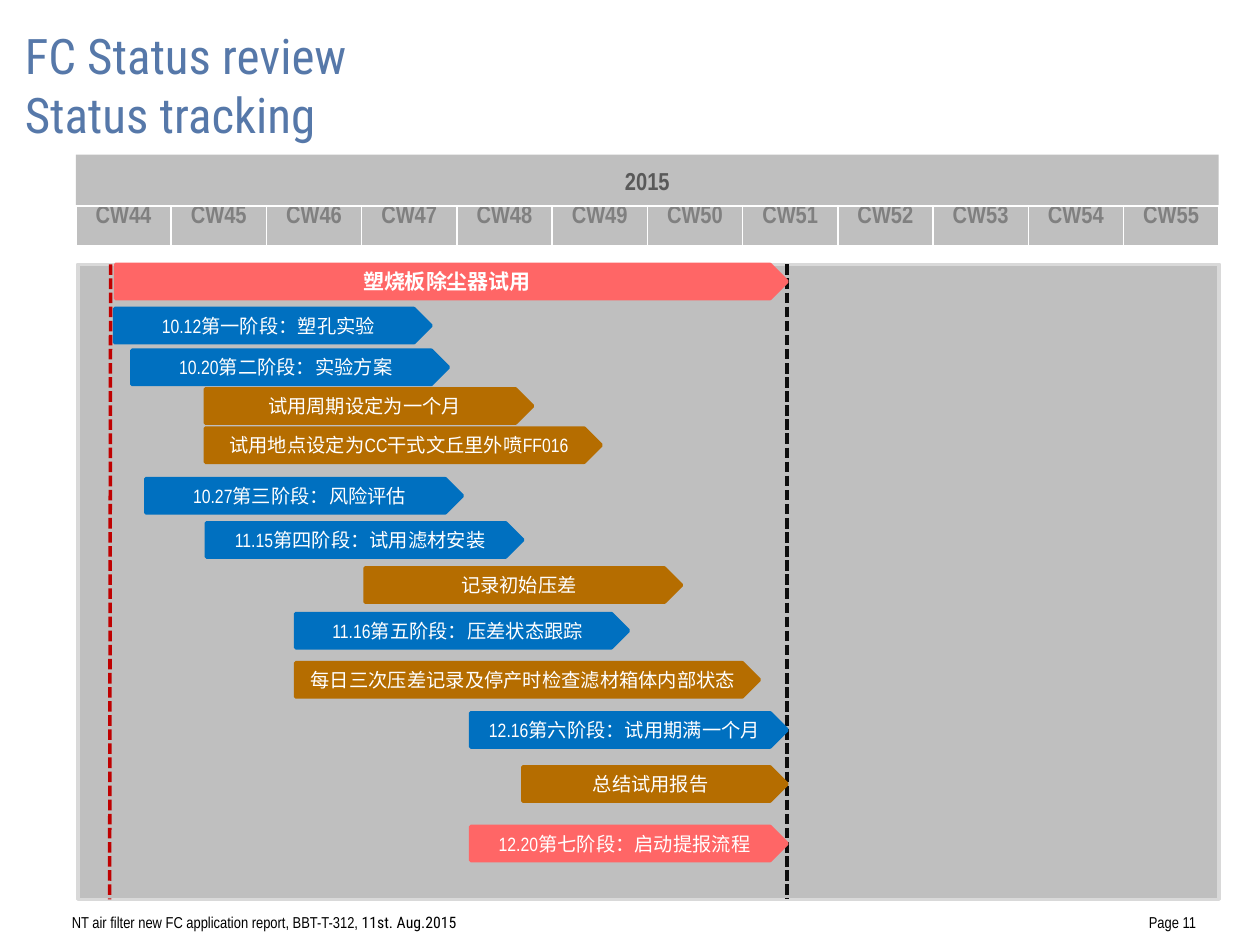
import pptx
import pptx.util
import pptx.dml.color
import pptx.enum.dml
import pptx.enum.shapes
import pptx.enum.text
import pptx.oxml
import pptx.oxml.ns
from pptx.util import Cm

COLOURS = {
    "panel": "BFBFBF",
    "panel_edge": "D9D9D9",
    "title": "5678A9",
    "year": "595959",
    "week": "808080",
    "white": "FFFFFF",
    "black": "000000",
    "finish": "0D0D0D",
    "start": "BF0000",
    "milestone": "FF6666",
    "phase": "0070C0",
    "task": "B56D00",
}
NARROW = "Arial Narrow"
CONDENSED = "Roboto Condensed"
ALIGN = pptx.enum.text.PP_ALIGN
ANCHOR = pptx.enum.text.MSO_ANCHOR
SHAPE = pptx.enum.shapes.MSO_SHAPE
BAR_HEIGHT = 0.69
BARS = [
    (0.76, 0, 13.54, "milestone", "塑烧板除尘器试用"),
    (0.74, 0.89, 6.38, "phase", "10.12第一阶段：塑孔实验"),
    (1.09, 1.73, 6.38, "phase", "10.20第二阶段：实验方案"),
    (2.57, 2.51, 6.6, "task", "试用周期设定为一个月"),
    (2.57, 3.3, 7.98, "task", "试用地点设定为CC干式文丘里外喷FF016"),
    (1.37, 4.32, 6.38, "phase", "10.27第三阶段：风险评估"),
    (2.59, 5.21, 6.38, "phase", "11.15第四阶段：试用滤材安装"),
    (5.79, 6.12, 6.38, "task", "记录初始压差"),
    (4.39, 7.04, 6.71, "phase", "11.16第五阶段：压差状态跟踪"),
    (4.39, 8.03, 9.35, "task", "每日三次压差记录及停产时检查滤材箱体内部状态"),
    (7.92, 9.04, 6.38, "phase", "12.16第六阶段：试用期满一个月"),
    (8.97, 10.13, 5.33, "task", "总结试用报告"),
    (7.92, 11.33, 6.38, "milestone", "12.20第七阶段：启动提报流程"),
]


def colour(name):
    return pptx.dml.color.RGBColor.from_string(COLOURS[name])


def add_span(para, text, *, size, tint, font=NARROW, bold=False):
    span = para.add_run()
    span.text = text
    span.font.size = pptx.util.Pt(size)
    span.font.name = font
    span.font.bold = bold
    span.font.color.rgb = colour(tint)


def set_frame(frame, *, anchor=ANCHOR.MIDDLE, side=0, edge=0):
    frame.word_wrap = True
    frame.vertical_anchor = anchor
    frame.margin_left = frame.margin_right = Cm(side)
    frame.margin_top = frame.margin_bottom = Cm(edge)


def add_block(page, kind, box, fill, edge=None):
    block = page.shapes.add_shape(kind, *map(Cm, box))
    block.shadow.inherit = False
    block.fill.solid()
    block.fill.fore_color.rgb = colour(fill)
    if edge:
        block.line.color.rgb = colour(edge)
        block.line.width = pptx.util.Pt(2)
    else:
        block.line.fill.background()
    return block


def add_marker(page, start, end, tint):
    marker = page.shapes.add_connector(
        pptx.enum.shapes.MSO_CONNECTOR.STRAIGHT, *map(Cm, start + end))
    marker.line.color.rgb = colour(tint)
    marker.line.width = pptx.util.Pt(2)
    marker.line.dash_style = pptx.enum.dml.MSO_LINE.SQUARE_DOT
    properties = marker._element.spPr
    properties.find(pptx.oxml.ns.qn("a:ln")).find(
        pptx.oxml.ns.qn("a:prstDash")).set("val", "sysDash")
    properties.append(pptx.oxml.parse_xml(
        f'<a:effectLst {pptx.oxml.ns.nsdecls("a")}/>'))


def set_borders(cell):
    properties = cell._tc.get_or_add_tcPr()
    for index, (side, points) in enumerate(
            [("lnL", 1), ("lnR", 1), ("lnT", 1), ("lnB", 3)]):
        properties.insert(index, pptx.oxml.parse_xml(
            f'<a:{side} {pptx.oxml.ns.nsdecls("a")} w="{pptx.util.Pt(points)}">'
            f'<a:solidFill><a:srgbClr val="{COLOURS["white"]}"/></a:solidFill>'
            f'</a:{side}>'))


def add_title(page, box):
    frame = page.shapes.add_textbox(*map(Cm, box)).text_frame
    set_frame(frame, anchor=ANCHOR.TOP, side=0.25, edge=0.13)
    for index, text in enumerate(["FC Status review", "Status tracking"]):
        para = frame.add_paragraph() if index else frame.paragraphs[0]
        para.alignment = ALIGN.LEFT
        add_span(para, text, size=28, tint="title", font=CONDENSED)


def add_calendar(page, box):
    left, top, width, height = box
    year_height = 1.03
    year = add_block(page, SHAPE.RECTANGLE, (left, top, width, year_height), "panel")
    set_frame(year.text_frame, side=0.2, edge=0.2)
    para = year.text_frame.paragraphs[0]
    para.alignment = ALIGN.CENTER
    add_span(para, "2015", size=14, tint="year", bold=True)

    weeks = range(44, 56)
    table = page.shapes.add_table(
        1, len(weeks), Cm(left), Cm(top + year_height),
        Cm(width), Cm(height - year_height)).table
    table.first_row = table.horz_banding = False
    for column, cell, week in zip(table.columns, table.rows[0].cells, weeks):
        column.width = Cm(width / len(weeks))
        cell.fill.solid()
        cell.fill.fore_color.rgb = colour("panel")
        cell.margin_left = cell.margin_right = Cm(0.1)
        cell.margin_top = cell.margin_bottom = Cm(0)
        set_borders(cell)
        para = cell.text_frame.paragraphs[0]
        para.alignment = ALIGN.CENTER
        add_span(para, f"CW{week}", size=14, tint="week", bold=True)


def add_schedule(page, box):
    left, top, width, height = box
    bottom = top + height
    add_block(page, SHAPE.RECTANGLE, box, "panel", "panel_edge")
    add_marker(page, (left + 14.3, top), (left + 14.3, bottom), "finish")
    add_marker(page, (left + 0.66, top), (left + 0.64, bottom), "start")
    for index, (across, down, length, tint, text) in enumerate(BARS):
        bar = add_block(page, SHAPE.PENTAGON,
                        (left + across, top + down, length, BAR_HEIGHT), tint, tint)
        set_frame(bar.text_frame, side=0.25)
        para = bar.text_frame.paragraphs[0]
        para.alignment = ALIGN.CENTER
        heading = index == 0
        add_span(para, text, size=12 if heading else 11, tint="white", bold=heading)


def add_footer(page, box):
    left, top, width, height = box
    note_width, number_width = 8.05, 5.89
    note = page.shapes.add_textbox(*map(Cm, (left, top, note_width, height)))
    number = page.shapes.add_textbox(
        *map(Cm, (left + width - number_width, top, number_width, height)))
    for holder, alignment in [(note, ALIGN.CENTER), (number, ALIGN.RIGHT)]:
        set_frame(holder.text_frame)
        holder.text_frame.paragraphs[0].alignment = alignment
    para = note.text_frame.paragraphs[0]
    add_span(para, "NT air filter new FC application report, BBT-T-312, ",
             size=9, tint="black")
    add_span(para, "11st. Aug.2015", size=9, tint="black", font=CONDENSED)
    add_span(number.text_frame.paragraphs[0], "Page 11", size=9, tint="black")


def main():
    deck = pptx.Presentation()
    deck.slide_width, deck.slide_height = Cm(25.4), Cm(19.05)
    page = deck.slides.add_slide(deck.slide_layouts[6])
    add_schedule(page, (1.57, 5.33, 23.01, 12.8))
    add_title(page, (0.25, 0.38, 25.15, 2.64))
    add_calendar(page, (1.53, 3.12, 23.04, 1.87))
    add_footer(page, (1.3, 18.14, 22.81, 0.91))
    deck.save("out.pptx")


if __name__ == "__main__":
    main()
